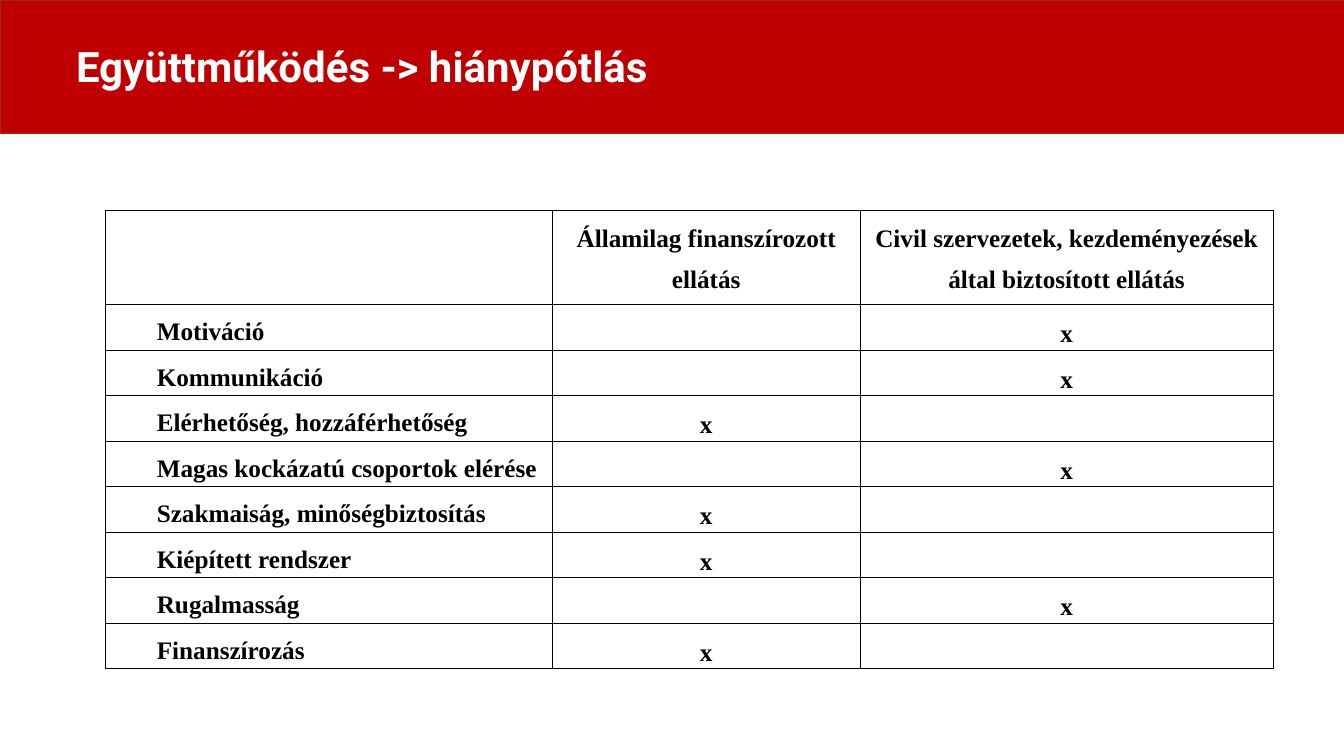
from lxml.etree import SubElement
from pptx import Presentation
from pptx.dml.color import RGBColor
from pptx.enum.shapes import MSO_SHAPE
from pptx.enum.text import MSO_ANCHOR, PP_ALIGN
from pptx.oxml.ns import qn
from pptx.util import Pt

COLORS = {"banner": "C00000", "banner_edge": "8B3314", "title": "FFFFFF", "ink": "000000"}
STATE, CIVIL = 1, 2
HEADINGS = [
    "",
    "Államilag finanszírozott ellátás",
    "Civil szervezetek, kezdeményezések által biztosított ellátás",
]
STRENGTHS = [
    ("Motiváció", CIVIL),
    ("Kommunikáció", CIVIL),
    ("Elérhetőség, hozzáférhetőség", STATE),
    ("Magas kockázatú csoportok elérése", CIVIL),
    ("Szakmaiság, minőségbiztosítás", STATE),
    ("Kiépített rendszer", STATE),
    ("Rugalmasság", CIVIL),
    ("Finanszírozás", STATE),
]
COLUMN_WIDTHS = [639.4, 439.2, 590.4]
HEADING_HEIGHT = 134


def rgb(name):
    return RGBColor.from_string(COLORS[name])


def write(frame, text, *, size, font, color, align=PP_ALIGN.LEFT, spacing=1.0, indent=0):
    paragraph = frame.paragraphs[0]
    paragraph.alignment = align
    paragraph.line_spacing = spacing
    if indent:
        paragraph.level = 1
        properties = paragraph._p.get_or_add_pPr()
        properties.set("marL", str(Pt(indent)))
        properties.set("indent", "0")
    run = paragraph.add_run()
    run.text = text
    run.font.size = Pt(size)
    run.font.name = font
    run.font.bold = True
    run.font.color.rgb = rgb(color)


def outline_cell(cell):
    properties = cell._tc.get_or_add_tcPr()
    for position, side in enumerate(("lnL", "lnR", "lnT", "lnB")):
        border = SubElement(properties, qn(f"a:{side}"), w=str(Pt(1)))
        fill = SubElement(border, qn("a:solidFill"))
        SubElement(fill, qn("a:srgbClr"), val=COLORS["ink"])
        properties.insert(position, border)


def fill_cell(cell, text, *, anchor=MSO_ANCHOR.TOP, **text_format):
    cell.fill.background()
    cell.margin_left = cell.margin_right = Pt(2)
    cell.margin_top = cell.margin_bottom = Pt(0)
    cell.vertical_anchor = anchor
    outline_cell(cell)
    if text:
        write(cell.text_frame, text, size=36, font="Times New Roman",
              color="ink", spacing=1.5, **text_format)


def add_banner(slide, left, top, width, height):
    banner = slide.shapes.add_shape(
        MSO_SHAPE.RECTANGLE, Pt(left), Pt(top), Pt(width), Pt(height))
    banner.shadow.inherit = False
    banner.fill.solid()
    banner.fill.fore_color.rgb = rgb("banner")
    banner.line.color.rgb = rgb("banner_edge")
    banner.line.width = Pt(1.25)
    title = slide.shapes.add_textbox(
        Pt(left + 101.5), Pt(top + 54.7), Pt(width - 203.7), Pt(80))
    title.text_frame.word_wrap = True
    write(title.text_frame, "Együttműködés -> hiánypótlás",
          size=60, font="Roboto", color="title")


def add_comparison(slide, left, top, width, height):
    table = slide.shapes.add_table(
        len(STRENGTHS) + 1, len(HEADINGS), Pt(left), Pt(top), Pt(width), Pt(height)).table
    table.horz_banding = False
    for column, share in zip(table.columns, COLUMN_WIDTHS):
        column.width = Pt(width * share / sum(COLUMN_WIDTHS))
    strength_height = (height - HEADING_HEIGHT) / len(STRENGTHS)
    for index, row in enumerate(table.rows):
        row.height = Pt(strength_height if index else HEADING_HEIGHT)
    for column, heading in enumerate(HEADINGS):
        fill_cell(table.cell(0, column), heading, align=PP_ALIGN.CENTER)
    for row, (strength, provider) in enumerate(STRENGTHS, start=1):
        fill_cell(table.cell(row, 0), strength, indent=72)
        for column in (STATE, CIVIL):
            fill_cell(table.cell(row, column), "x" if column == provider else "",
                      anchor=MSO_ANCHOR.MIDDLE, align=PP_ALIGN.CENTER)


def main():
    presentation = Presentation()
    presentation.slide_width, presentation.slide_height = Pt(1920), Pt(1080)
    slide = presentation.slides.add_slide(presentation.slide_layouts[6])
    add_banner(slide, 0, 0, 1920, 190)
    add_comparison(slide, 150, 301, 1669, 654)
    presentation.save("out.pptx")


if __name__ == "__main__":
    main()
